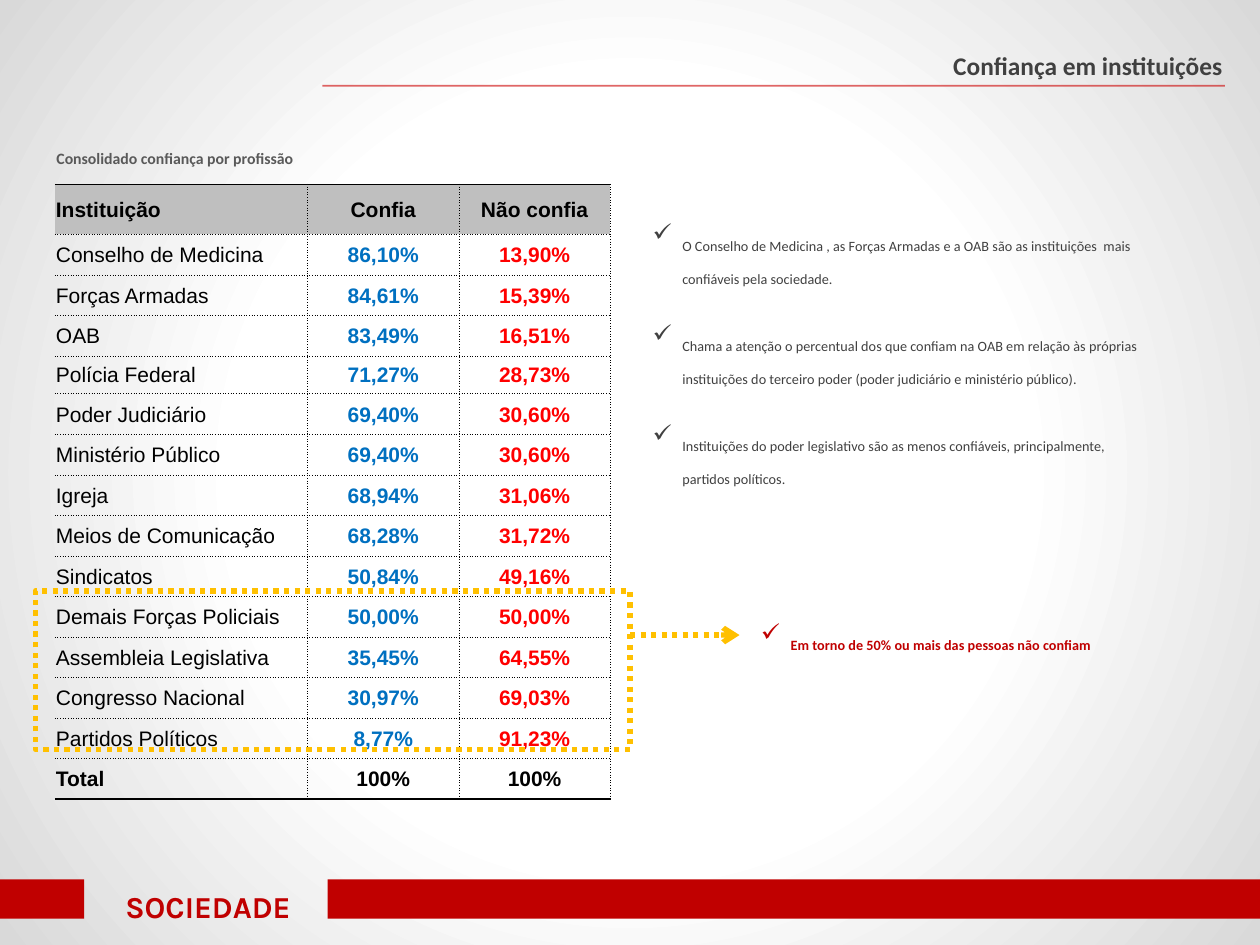
"""Build the slide on trust in institutions: table, highlight and remarks."""
from lxml.etree import SubElement
from pptx import Presentation
from pptx.dml.color import RGBColor
from pptx.enum.dml import MSO_LINE as Dash
from pptx.enum.shapes import MSO_CONNECTOR as Conn, MSO_SHAPE as Shape
from pptx.enum.text import MSO_ANCHOR as Anchor, PP_ALIGN as Align
from pptx.oxml import parse_xml
from pptx.oxml.ns import nsdecls, qn
from pptx.util import Pt

TITLE = "Confiança em instituições"
CAPTION = "Consolidado confiança por profissão"
SECTION = "SOCIEDADE"
HEADER = ("Instituição", "Confia", "Não confia")
RATES = [
    ("Conselho de Medicina", "86,10%", "13,90%"),
    ("Forças Armadas", "84,61%", "15,39%"),
    ("OAB", "83,49%", "16,51%"),
    ("Polícia Federal", "71,27%", "28,73%"),
    ("Poder Judiciário", "69,40%", "30,60%"),
    ("Ministério Público", "69,40%", "30,60%"),
    ("Igreja", "68,94%", "31,06%"),
    ("Meios de Comunicação", "68,28%", "31,72%"),
    ("Sindicatos", "50,84%", "49,16%"),
    ("Demais Forças Policiais", "50,00%", "50,00%"),
    ("Assembleia Legislativa", "35,45%", "64,55%"),
    ("Congresso Nacional", "30,97%", "69,03%"),
    ("Partidos Políticos", "8,77%", "91,23%"),
]
TOTAL = ("Total", "100%", "100%")
REMARKS = [
    "O Conselho de Medicina , as Forças Armadas e a OAB são as instituições  mais confiáveis pela sociedade.",
    "Chama a atenção o percentual dos que confiam na OAB em relação às próprias instituições do terceiro poder (poder judiciário e ministério público).",
    "Instituições do poder legislativo são as menos confiáveis, principalmente, partidos políticos.",
]
WARNING = ["Em torno de 50% ou mais das pessoas não confiam"]

THEME = dict(
    white="FFFFFF", edge="D9D9D9", rule="CC0000", brand="C00000", title="404040",
    caption="595959", black="000000", header="BFBFBF", trust="0070C0",
    distrust="FF0000", highlight="FFC000",
    body_font="Calibri", table_font="Arial", section_font="Karla",
    title_size=25, caption_size=15.5, body_size=14, table_size=12, section_size=30,
)
COLUMNS = (144.5, 86.5, 86.5)
HEADER_HEIGHT, ROW_HEIGHT, SHORT_HEIGHT = 28.5, 23.17, 21.6
SHORT_ROW = "Polícia Federal"
BULLET_INDENT, REMARK_GAP = 17, 19


def rgb(key):
    """Return a theme colour."""
    return RGBColor.from_string(THEME[key])


def write(frame, texts, *, size, color, font="body_font", bold=False, align=Align.LEFT,
          anchor=Anchor.TOP, lowered=True, bullet=None, gap=0):
    """Write one paragraph per text in the given format."""
    frame.word_wrap = True
    frame.vertical_anchor = anchor
    for index, text in enumerate(texts):
        paragraph = frame.add_paragraph() if index else frame.paragraphs[0]
        paragraph.alignment = align
        paragraph.space_before = Pt(gap if index else 0)
        if bullet:
            props = paragraph._p.get_or_add_pPr()
            props.set("marL", str(Pt(BULLET_INDENT)))
            props.set("indent", str(-Pt(BULLET_INDENT)))
            SubElement(props, qn("a:buChar"), char=bullet)
        run = paragraph.add_run()
        run.text = text
        run.font.name = THEME[font]
        run.font.size = Pt(THEME[size])
        run.font.bold = bold
        run.font.color.rgb = rgb(color)
        if lowered:
            run._r.get_or_add_rPr().set("baseline", "-25000")


def add_text(slide, box, texts, **style):
    """Add a text box."""
    write(slide.shapes.add_textbox(*map(Pt, box)).text_frame, texts, **style)


def add_rect(slide, box, fill=None):
    """Add a rectangle without outline or shadow."""
    rect = slide.shapes.add_shape(Shape.RECTANGLE, *map(Pt, box))
    rect.shadow.inherit = False
    rect.line.fill.background()
    if fill:
        rect.fill.solid()
        rect.fill.fore_color.rgb = rgb(fill)
    else:
        rect.fill.background()
    return rect


def stroke(line, color, width, dash=None):
    """Format an outline or a line."""
    line.color.rgb = rgb(color)
    line.width = Pt(width)
    if dash:
        line.dash_style = dash


def add_line(slide, ends, color, width, dash=None):
    """Add a straight line without shadow."""
    line = slide.shapes.add_connector(Conn.STRAIGHT, *map(Pt, ends))
    SubElement(line._element.spPr, qn("a:effectLst"))
    stroke(line.line, color, width, dash)
    return line


def add_backdrop(slide, width, height):
    """Cover the slide with a radial gradient."""
    backdrop = add_rect(slide, (0, 0, width, height))
    stops = "".join(
        f'<a:gs pos="{pos}"><a:srgbClr val="{THEME[key]}"/></a:gs>'
        for pos, key in ((0, "white"), (50000, "white"), (100000, "edge")))
    gradient = parse_xml(
        f'<a:gradFill {nsdecls("a")} rotWithShape="1"><a:gsLst>{stops}</a:gsLst>'
        '<a:path path="circle"><a:fillToRect l="50000" t="50000" r="50000" b="50000"/>'
        "</a:path></a:gradFill>")
    props = backdrop._element.spPr
    props.replace(props.find(qn("a:noFill")), gradient)


def add_border(cell, side, width, dash):
    """Draw one side of a cell, or clear it when the width is zero."""
    border = SubElement(cell._tc.get_or_add_tcPr(), qn(f"a:ln{side}"), w=str(Pt(width)))
    if not width:
        SubElement(border, qn("a:noFill"))
        return
    SubElement(SubElement(border, qn("a:solidFill")), qn("a:srgbClr"), val=THEME["black"])
    SubElement(border, qn("a:prstDash"), val=dash)


def add_rates(slide, left, top):
    """Add the table of trust rates."""
    rows = [HEADER, *RATES, TOTAL]
    heights = [HEADER_HEIGHT] + [
        SHORT_HEIGHT if row[0] == SHORT_ROW else ROW_HEIGHT for row in rows[1:]]
    table = slide.shapes.add_table(
        len(rows), len(COLUMNS), *map(Pt, (left, top, sum(COLUMNS), sum(heights)))).table
    table.first_row = table.horz_banding = False
    for column, width in zip(table.columns, COLUMNS):
        column.width = Pt(width)
    last = len(rows) - 1
    for r, (row, height) in enumerate(zip(rows, heights)):
        table.rows[r].height = Pt(height)
        outer = r in (0, last)
        for c, text in enumerate(row):
            cell = table.cell(r, c)
            cell.margin_left = cell.margin_right = cell.margin_top = Pt(0.7)
            cell.margin_bottom = Pt(0)
            cell.vertical_anchor = Anchor.MIDDLE
            dotted, solid = (0.5, "dot"), (1, "solid")
            add_border(cell, "L", *(dotted if c else (0, None)))
            add_border(cell, "R", *dotted)
            add_border(cell, "T", *(dotted if r else solid))
            add_border(cell, "B", *(solid if r == last else dotted))
            if r:
                cell.fill.background()
            else:
                cell.fill.solid()
                cell.fill.fore_color.rgb = rgb("header")
            write(cell.text_frame, [text], size="table_size", font="table_font",
                  color="black" if outer else ("black", "trust", "distrust")[c],
                  bold=outer or c > 0, align=Align.CENTER if c else Align.LEFT,
                  anchor=Anchor.MIDDLE, lowered=False)


def main():
    """Build and save the slide."""
    deck = Presentation()
    deck.slide_width, deck.slide_height = Pt(720), Pt(540)
    slide = deck.slides.add_slide(deck.slide_layouts[6])

    add_backdrop(slide, 720, 540)
    rule = add_line(slide, (184.3, 49, 700, 49), "rule", 1)
    SubElement(rule._element.spPr.find(".//" + qn("a:srgbClr")), qn("a:alpha"), val="60000")
    for left, width in ((187.2, 532.8), (0, 48.2)):
        add_rect(slide, (left, 502.5, width, 22.5), "brand")
    add_text(slide, (31, 491, 175.7, 33.8), [SECTION], size="section_size", color="brand",
             font="section_font", bold=True, align=Align.CENTER, anchor=Anchor.MIDDLE)
    add_text(slide, (25.2, 71.3, 652.3, 26), [CAPTION], size="caption_size",
             color="caption", bold=True)
    add_text(slide, (223.9, 9.4, 481.7, 39.6), [TITLE], size="title_size", color="title",
             bold=True, align=Align.RIGHT, anchor=Anchor.MIDDLE)

    add_rates(slide, 31.3, 105.5)
    add_text(slide, (365.8, 122.4, 300.2, 193.7), REMARKS, size="body_size",
             color="title", bullet="✓", gap=REMARK_GAP)
    highlight = add_rect(slide, (20.2, 337.7, 339.8, 90.7))
    stroke(highlight.line, "highlight", 3, Dash.ROUND_DOT)
    arrow = add_line(slide, (360, 362.9, 422.6, 362.9), "highlight", 3, Dash.ROUND_DOT)
    SubElement(arrow.line._get_or_add_ln(), qn("a:tailEnd"), type="arrow")
    add_text(slide, (427.7, 350.6, 254.9, 41), WARNING, size="body_size",
             color="brand", bold=True, bullet="✓")
    deck.save("out.pptx")


if __name__ == "__main__":
    main()
